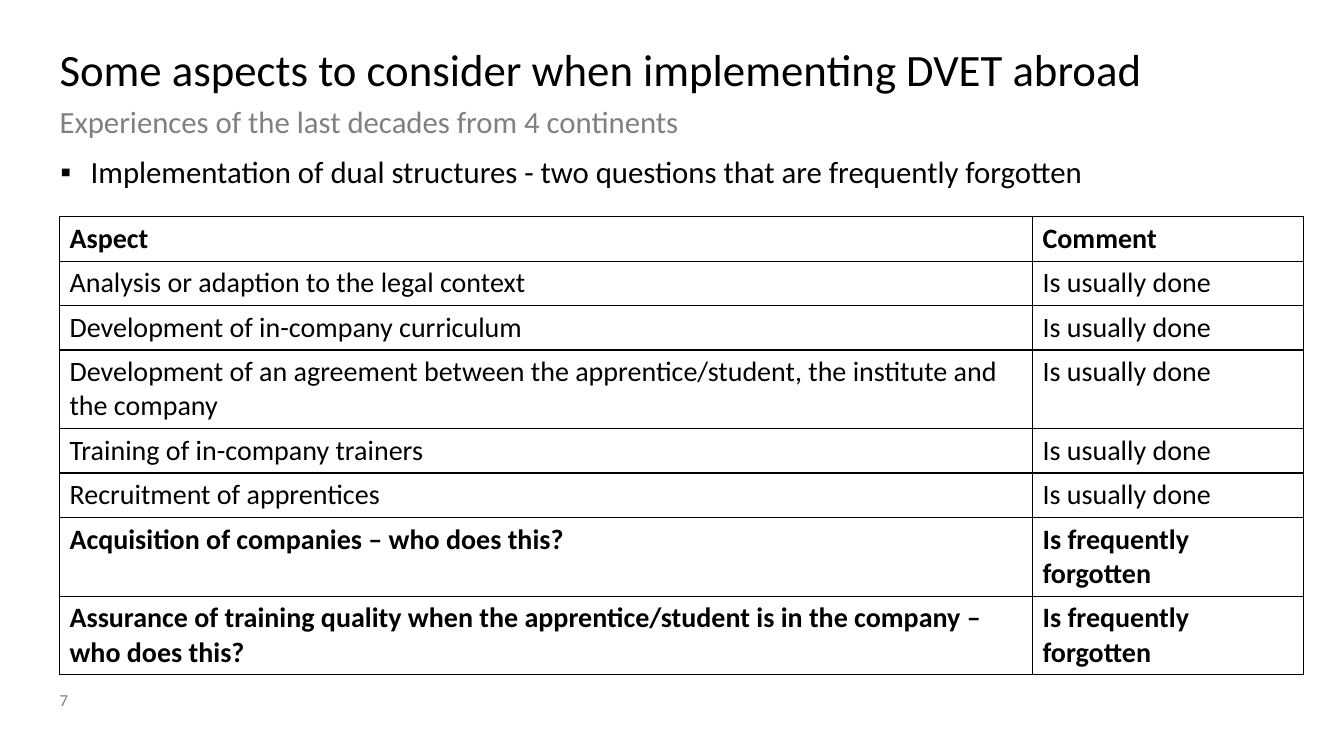
from lxml.etree import SubElement
from pptx import Presentation
from pptx.dml.color import RGBColor
from pptx.enum.text import MSO_ANCHOR, MSO_AUTO_SIZE, PP_ALIGN
from pptx.oxml.ns import qn
from pptx.util import Inches, Pt

BLACK = RGBColor(0x00, 0x00, 0x00)
GRAY = RGBColor(0x80, 0x80, 0x80)
FONT = "Calibri"
LEFT = 0.59
USUALLY, FORGOTTEN = "Is usually done", "Is frequently forgotten"

# Aspect, comment, bold, number of text lines
ASPECTS = [
    ("Aspect", "Comment", True, 1),
    ("Analysis or adaption to the legal context", USUALLY, False, 1),
    ("Development of in-company curriculum", USUALLY, False, 1),
    ("Development of an agreement between the apprentice/student, "
     "the institute and the company", USUALLY, False, 2),
    ("Training of in-company trainers", USUALLY, False, 1),
    ("Recruitment of apprentices", USUALLY, False, 1),
    ("Acquisition of companies – who does this?", FORGOTTEN, True, 2),
    ("Assurance of training quality when the apprentice/student is in "
     "the company – who does this?", FORGOTTEN, True, 2),
]
ROW_HEIGHTS = {1: 0.44, 2: 0.78}


class SlideBuilder:
    """Holds the style and the current slide."""

    def __init__(self, slide):
        self.slide = slide

    def style(self, paragraph, size, color, bold=False):
        paragraph.alignment = PP_ALIGN.LEFT
        font = paragraph.font
        font.name, font.size, font.bold = FONT, Pt(size), bold
        font.color.rgb = color

    def fill_frame(self, shape, text, size, color, anchor=MSO_ANCHOR.TOP,
                   spacing=None, after=0, bullet=None):
        frame = shape.text_frame
        frame.word_wrap = True
        frame.auto_size = MSO_AUTO_SIZE.NONE
        frame.vertical_anchor = anchor
        frame.margin_left = frame.margin_right = 0
        frame.margin_top = frame.margin_bottom = 0
        paragraph = frame.paragraphs[0]
        paragraph.text = text
        paragraph.line_spacing = spacing
        paragraph.space_before = Pt(0)
        paragraph.space_after = Pt(after)
        if bullet:
            properties = paragraph._p.get_or_add_pPr()
            properties.set("marL", str(Inches(0.3)))
            properties.set("indent", str(-Inches(0.3)))
            SubElement(properties, qn("a:buFont"), typeface="Arial")
            SubElement(properties, qn("a:buChar"), char=bullet)
        self.style(paragraph, size, color)

    def title(self, text, left, top, width, height):
        title = self.slide.shapes.title
        title.left, title.top = Inches(left), Inches(top)
        title.width, title.height = Inches(width), Inches(height)
        self.fill_frame(title, text, 32, BLACK, spacing=0.9)

    def text(self, text, left, top, width, height, size, color, **options):
        box = self.slide.shapes.add_textbox(
            Inches(left), Inches(top), Inches(width), Inches(height))
        self.fill_frame(box, text, size, color, **options)

    def cell(self, cell, text, bold):
        cell.text = text
        self.style(cell.text_frame.paragraphs[0], 20, BLACK, bold)
        properties = cell._tc.get_or_add_tcPr()
        for side in ("lnL", "lnR", "lnT", "lnB"):
            border = SubElement(properties, qn(f"a:{side}"), w=str(Pt(1)))
            line_fill = SubElement(border, qn("a:solidFill"))
            SubElement(line_fill, qn("a:srgbClr"), val=str(BLACK))
        cell.fill.background()

    def table(self, rows, left, top, column_widths):
        heights = [ROW_HEIGHTS[lines] for *_, lines in rows]
        table = self.slide.shapes.add_table(
            len(rows), len(column_widths), Inches(left), Inches(top),
            Inches(sum(column_widths)), Inches(sum(heights))).table
        table.first_row = table.horz_banding = False
        for column, width in zip(table.columns, column_widths):
            column.width = Inches(width)
        for row, height, (aspect, comment, bold, _) in zip(
                table.rows, heights, rows):
            row.height = Inches(height)
            for cell, text in zip(row.cells, (aspect, comment)):
                self.cell(cell, text, bold)


def main():
    presentation = Presentation()
    presentation.slide_width = Inches(13.33)
    presentation.slide_height = Inches(7.5)
    title_only = presentation.slide_layouts[5]
    builder = SlideBuilder(presentation.slides.add_slide(title_only))

    # Heading
    builder.title("Some aspects to consider when implementing DVET abroad",
                  LEFT, 0.47, 12.15, 1.18)
    builder.text("Experiences of the last decades from 4 continents",
                 LEFT, 1.06, 12.15, 0.59, 22, GRAY, spacing=0.9, after=10)

    # Page number
    builder.text("7", LEFT, 6.65, 0.98, 0.39, 12, GRAY,
                 anchor=MSO_ANCHOR.BOTTOM)

    # Aspects and the point they illustrate
    builder.table(ASPECTS, LEFT, 2.15, (9.65, 2.69))
    builder.text("Implementation of dual structures - two questions that "
                 "are frequently forgotten", 0.6, 1.56, 12.33, 4.7, 22, BLACK,
                 spacing=0.9, after=10, bullet="▪")

    presentation.save("out.pptx")


if __name__ == "__main__":
    main()
